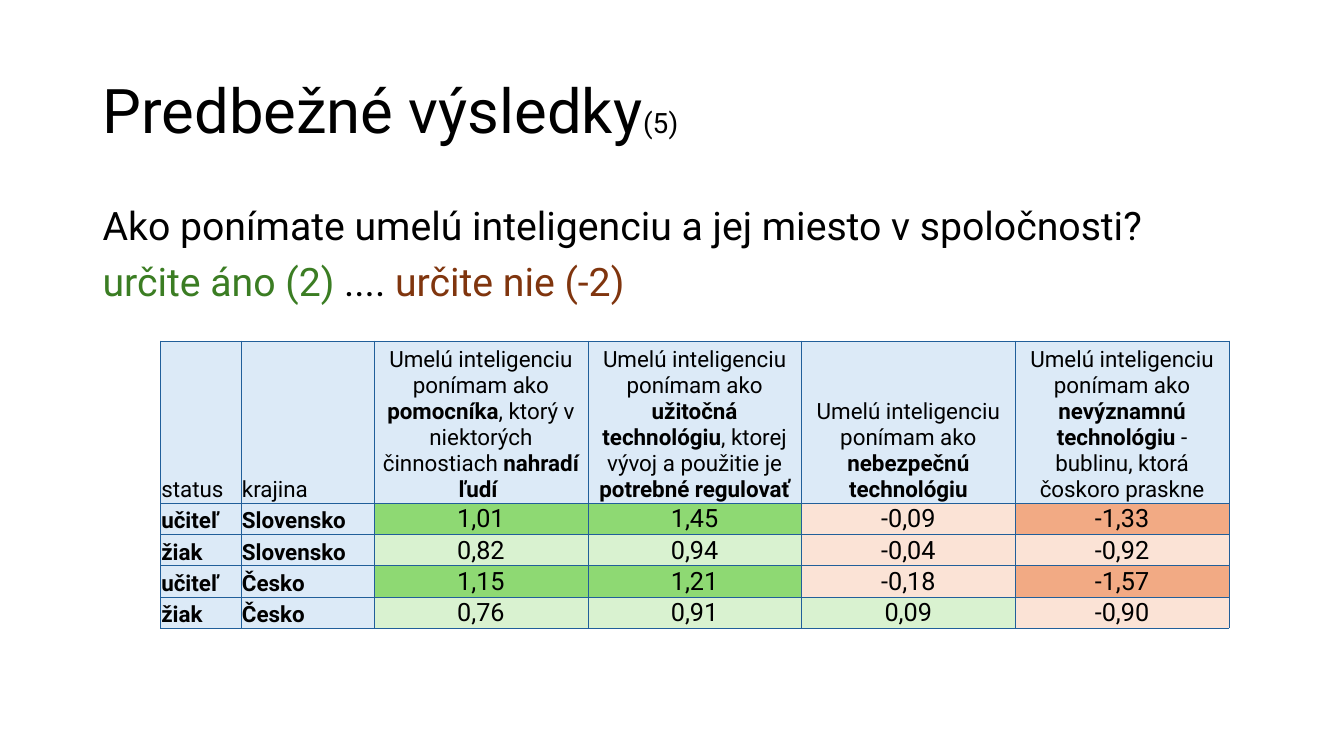
from lxml import etree
from pptx import Presentation
from pptx import util as u
from pptx.dml.color import RGBColor
from pptx.enum import text
from pptx.oxml import ns

PX = 9144  # 100 px to the inch
FONT = "Roboto"
BLACK = RGBColor(0x00, 0x00, 0x00)
GREEN = RGBColor(0x3B, 0x7D, 0x23)
BROWN = RGBColor(0x80, 0x35, 0x0E)
BLUE = RGBColor(0xDC, 0xEA, 0xF7)
EDGE = RGBColor(0x21, 0x5F, 0x9A)
YES = RGBColor(0x8E, 0xD9, 0x73)
PALE_YES = RGBColor(0xD9, 0xF2, 0xD0)
NO = RGBColor(0xF2, 0xAA, 0x84)
PALE_NO = RGBColor(0xFB, 0xE3, 0xD6)

COLS = [80, 132] + [212] * 4
HEAD_H, ROW_H = 156, 30
LEAD = ("Umelú inteligenciu ponímam ako ", False)
HEADS = [
    [("status", False)],
    [("krajina", False)],
    [LEAD, ("pomocníka", True), (", ktorý v niektorých činnostiach ", False),
     ("nahradí ľudí ", True)],
    [LEAD, ("užitočná technológiu", True),
     (", ktorej vývoj a použitie je ", False), ("potrebné regulovať", True)],
    [LEAD, ("nebezpečnú technológiu", True)],
    [LEAD, ("nevýznamnú technológiu ", True),
     ("- bublinu, ktorá čoskoro praskne", False)],
]
ROWS = [
    ("učiteľ", "Slovensko", "1,01", "1,45", "-0,09", "-1,33"),
    ("žiak", "Slovensko", "0,82", "0,94", "-0,04", "-0,92"),
    ("učiteľ", "Česko", "1,15", "1,21", "-0,18", "-1,57"),
    ("žiak", "Česko", "0,76", "0,91", "0,09", "-0,90"),
]


def add_run(para, words, size, color=BLACK, bold=False):
    run = para.add_run()
    run.text = words
    run.font.name = FONT
    run.font.size = u.Pt(size)
    run.font.bold = bold
    run.font.color.rgb = color


def add_box(slide, box, paras, anchor, before):
    """Text box; each paragraph is a list of (words, size, colour)."""
    frame = slide.shapes.add_textbox(*(n * PX for n in box)).text_frame
    frame.word_wrap = True
    frame.vertical_anchor = anchor
    for i, runs in enumerate(paras):
        para = frame.add_paragraph() if i else frame.paragraphs[0]
        para.line_spacing = 0.9
        para.space_before = u.Pt(before)
        for run in runs:
            add_run(para, *run)


def add_title(slide, box):
    runs = [("Predbežné výsledky", 44, BLACK), ("(5)", 20, BLACK)]
    add_box(slide, box, [runs], text.MSO_ANCHOR.MIDDLE, 0)


def add_body(slide, box):
    ask = "Ako ponímate umelú inteligenciu a jej miesto v spoločnosti?"
    scale = [("určite áno (2)", 28, GREEN), (" .... ", 28, BLACK),
             ("určite nie (-2)", 28, BROWN)]
    add_box(slide, box, [[(ask, 28, BLACK)], scale], text.MSO_ANCHOR.TOP, 10)


def shade(score):
    """Fill by sign, stronger from 1 upwards in size."""
    num = float(score.replace(",", "."))
    strong = abs(num) >= 1
    if num > 0:
        return YES if strong else PALE_YES
    return NO if strong else PALE_NO


def set_cell(cell, runs, size, fill, center):
    # Borders come before the fill in the cell's XML
    props = cell._tc.get_or_add_tcPr()
    for side in ("a:lnL", "a:lnR", "a:lnT", "a:lnB"):
        line = etree.SubElement(props, ns.qn(side), w=str(u.Pt(0.25)))
        paint = etree.SubElement(line, ns.qn("a:solidFill"))
        etree.SubElement(paint, ns.qn("a:srgbClr"), val=str(EDGE))
    cell.fill.solid()
    cell.fill.fore_color.rgb = fill
    cell.margin_left = cell.margin_right = cell.margin_top = PX
    cell.margin_bottom = 0
    cell.vertical_anchor = text.MSO_ANCHOR.BOTTOM
    para = cell.text_frame.paragraphs[0]
    para.alignment = text.PP_ALIGN.CENTER if center else text.PP_ALIGN.LEFT
    for words, bold in runs:
        add_run(para, words, size, bold=bold)


def add_scores(slide, left, top):
    high = HEAD_H + ROW_H * len(ROWS)
    dims = (left, top, sum(COLS), high)
    table = slide.shapes.add_table(
        len(ROWS) + 1, len(COLS), *(n * PX for n in dims)).table
    table.first_row = table.horz_banding = False
    for col, wide in zip(table.columns, COLS):
        col.width = wide * PX
    for i, row in enumerate(table.rows):
        row.height = (ROW_H if i else HEAD_H) * PX

    # Header row
    for c, runs in enumerate(HEADS):
        set_cell(table.cell(0, c), runs, 16, BLUE, c > 1)
    # Labels and scores
    for r, row in enumerate(ROWS, 1):
        for c, words in enumerate(row):
            label = c < 2
            set_cell(table.cell(r, c), [(words, label)], 16 if label else 18,
                     BLUE if label else shade(words), not label)


def main():
    deck = Presentation()
    deck.slide_width, deck.slide_height = 1333 * PX, 750 * PX
    slide = deck.slides.add_slide(deck.slide_layouts[6])
    add_title(slide, (92, 40, 1150, 145))
    add_body(slide, (92, 200, 1150, 476))
    add_scores(slide, 159, 338)
    deck.save("out.pptx")


if __name__ == "__main__":
    main()
